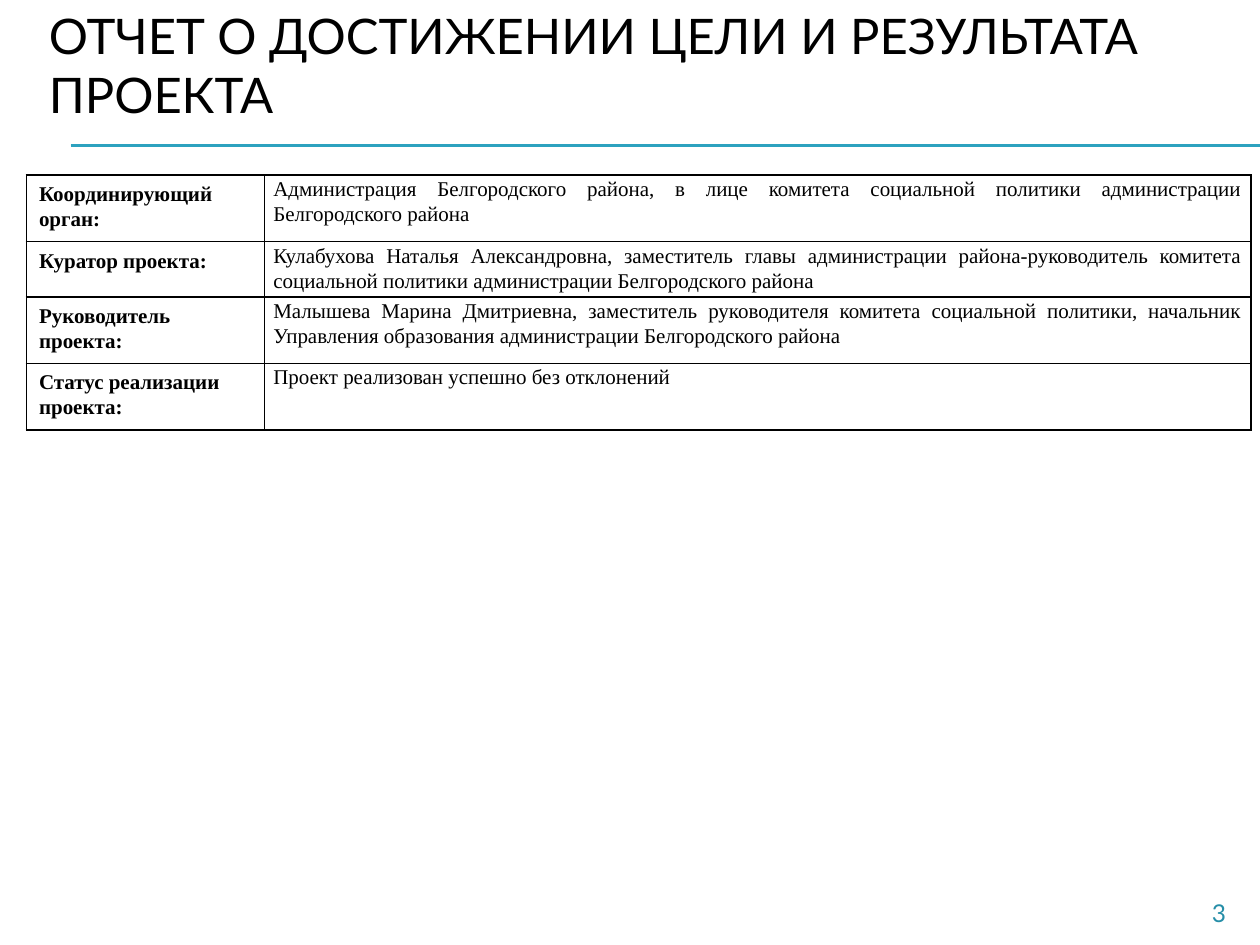
from lxml import etree
from pptx import Presentation
from pptx.dml.color import RGBColor
from pptx.enum.shapes import MSO_CONNECTOR
from pptx.enum.text import MSO_ANCHOR as Anchor, PP_ALIGN as Align
from pptx.oxml import parse_xml
from pptx.oxml.ns import nsdecls, qn
from pptx.util import Inches, Pt

BLACK = "000000"
TEAL = "2DA2BF"
DARK_TEAL = "268EA8"

COLUMN_WIDTHS = [1.89, 7.83]
PROJECT_ROWS = [
    (0.35, "Координирующий орган:",
     "Администрация Белгородского района, в лице комитета социальной политики "
     "администрации Белгородского района"),
    (0.36, "Куратор проекта:",
     "Кулабухова Наталья Александровна, заместитель главы администрации "
     "района-руководитель комитета социальной политики администрации "
     "Белгородского района"),
    (0.35, "Руководитель проекта:",
     "Малышева Марина Дмитриевна, заместитель руководителя комитета социальной "
     "политики, начальник Управления образования администрации Белгородского района"),
    (0.44, "Статус реализации\nпроекта:",
     "Проект реализован успешно без отклонений"),
]


def rgb(color):
    return RGBColor.from_string(color)


def write(frame, text, size=12, font="Times New Roman", color=BLACK, bold=False,
          align=Align.LEFT, spacing=None):
    """Fill a text frame, one paragraph per line of text."""
    frame.word_wrap = True
    frame.text = text
    for paragraph in frame.paragraphs:
        paragraph.alignment = align
        paragraph.line_spacing = spacing
        for run in paragraph.runs:
            run.font.size = Pt(size)
            run.font.name = font
            run.font.bold = bold
            run.font.color.rgb = rgb(color)


def add_text(slide, left, top, width, height, text, anchor=Anchor.TOP, **style):
    box = slide.shapes.add_textbox(Inches(left), Inches(top), Inches(width), Inches(height))
    box.text_frame.vertical_anchor = anchor
    write(box.text_frame, text, **style)


def add_rule(slide, y):
    rule = slide.shapes.add_connector(
        MSO_CONNECTOR.STRAIGHT, Inches(0.56), Inches(y), Inches(10), Inches(y))
    rule.line.color.rgb = rgb(TEAL)
    rule.line.width = Pt(0.75)
    etree.SubElement(rule._element.spPr, qn("a:effectLst"))


def set_borders(cell, color=BLACK, width=1):
    properties = cell._tc.get_or_add_tcPr()
    for position, side in enumerate(["lnL", "lnR", "lnT", "lnB"]):
        properties.insert(position, parse_xml(
            f'<a:{side} {nsdecls("a")} w="{Pt(width)}"><a:solidFill>'
            f'<a:srgbClr val="{color}"/></a:solidFill></a:{side}>'))


def fill_cell(cell, text, insets, **style):
    """Write a bordered cell; insets are left and right, top, bottom."""
    side, top, bottom = map(Inches, insets)
    cell.margin_left = cell.margin_right = side
    cell.margin_top, cell.margin_bottom = top, bottom
    cell.fill.background()
    set_borders(cell)
    write(cell.text_frame, text, spacing=1.07, **style)


def add_project_table(slide):
    height = 2.01
    frame = slide.shapes.add_table(
        len(PROJECT_ROWS), len(COLUMN_WIDTHS), Inches(0.21), Inches(1.39),
        Inches(sum(COLUMN_WIDTHS)), Inches(height))
    table = frame.table
    table.first_row = table.horz_banding = False
    for column, width in zip(table.columns, COLUMN_WIDTHS):
        column.width = Inches(width)
    for row, (row_height, label, value) in zip(table.rows, PROJECT_ROWS):
        row.height = Inches(row_height)
        label_cell, value_cell = row.cells
        fill_cell(label_cell, label, (0.1, 0.05, 0.05), bold=True)
        fill_cell(value_cell, value, (0.07, 0.01, 0), align=Align.JUSTIFY)
    frame.height = Inches(height)


def main():
    deck = Presentation()
    deck.slide_width, deck.slide_height = Inches(10), Inches(7.5)
    slide = deck.slides.add_slide(deck.slide_layouts[6])
    for y in (1.15, 1.16):
        add_rule(slide, y)
    add_text(slide, 0.29, 0.13, 9.65, 0.76,
             "ОТЧЕТ О ДОСТИЖЕНИИ ЦЕЛИ И РЕЗУЛЬТАТА ПРОЕКТА",
             anchor=Anchor.MIDDLE, size=28, font="Lato")
    add_text(slide, 0.51, 7.08, 9.32, 0.27, "3",
             size=14, font="Lato", color=DARK_TEAL, align=Align.RIGHT)
    add_project_table(slide)
    deck.save("out.pptx")


if __name__ == "__main__":
    main()
